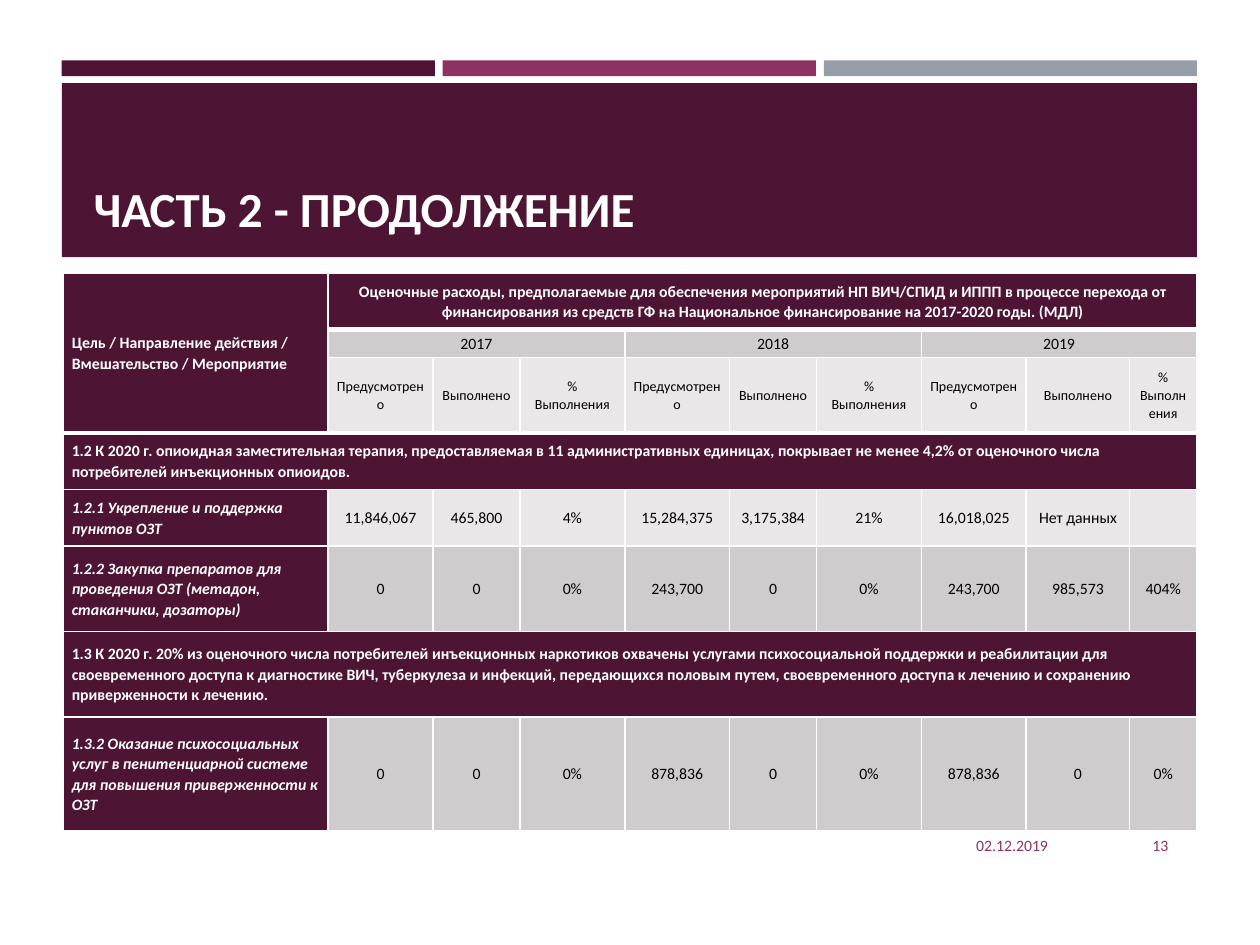
from dataclasses import dataclass

from lxml import etree
from pptx import Presentation
from pptx.dml.color import RGBColor
from pptx.enum.shapes import MSO_SHAPE
from pptx.enum.text import MSO_ANCHOR, MSO_AUTO_SIZE, PP_ALIGN
from pptx.oxml.ns import qn
from pptx.util import Inches, Pt

LEFT, CENTER, RIGHT = PP_ALIGN.LEFT, PP_ALIGN.CENTER, PP_ALIGN.RIGHT
MIDDLE, BOTTOM = MSO_ANCHOR.MIDDLE, MSO_ANCHOR.BOTTOM
RECTANGLE = MSO_SHAPE.RECTANGLE
NO_AUTOFIT = MSO_AUTO_SIZE.NONE

PLUM = RGBColor(0x4D, 0x14, 0x34)
BERRY = RGBColor(0x90, 0x31, 0x63)
STEEL = RGBColor(0x96, 0x9F, 0xA7)
DARK_BAND = RGBColor(0xD0, 0xCC, 0xCE)
LIGHT_BAND = RGBColor(0xE9, 0xE7, 0xE8)
WHITE = RGBColor(0xFF, 0xFF, 0xFF)
BLACK = RGBColor(0x00, 0x00, 0x00)
FONT = "Calibri"

COLUMNS = [2.1, 0.83, 0.69, 0.83, 0.83, 0.69, 0.83, 0.83, 0.82, 0.53]
ROWS = [0.45, 0.22, 0.6, 0.45, 0.45, 0.68, 0.68, 0.9]
HEAVY_BOTTOMS = (0, 2)
YEARS = ["2017", "2018", "2019"]
MEASURES = ["Предусмотрено", "Выполнено", "% Выполнения"]
CORNER = "Цель / Направление действия / Вмешательство / Мероприятие"
HEADING = (
    "Оценочные расходы, предполагаемые для обеспечения мероприятий НП ВИЧ/СПИД и ИППП "
    "в процессе перехода от финансирования из средств ГФ на Национальное финансирование "
    "на 2017-2020 годы. (МДЛ)"
)
GOALS = {
    3: "1.2 К 2020 г. опиоидная заместительная терапия, предоставляемая в 11 "
       "административных единицах, покрывает не менее 4,2% от оценочного числа "
       "потребителей инъекционных опиоидов.",
    6: "1.3 К 2020 г. 20% из оценочного числа потребителей инъекционных наркотиков "
       "охвачены услугами психосоциальной поддержки и реабилитации для своевременного "
       "доступа к диагностике ВИЧ, туберкулеза и инфекций, передающихся половым путем, "
       "своевременного доступа к лечению и сохранению приверженности к лечению.",
}
ACTIVITIES = {
    4: (LIGHT_BAND, "1.2.1 Укрепление и поддержка пунктов ОЗТ",
        ["11,846,067", "465,800", "4%", "15,284,375", "3,175,384", "21%",
         "16,018,025", "Нет данных", ""]),
    5: (DARK_BAND, "1.2.2 Закупка препаратов для проведения ОЗТ (метадон, стаканчики, дозаторы)",
        ["0", "0", "0%", "243,700", "0", "0%", "243,700", "985,573", "404%"]),
    7: (DARK_BAND, "1.3.2 Оказание психосоциальных услуг в пенитенциарной системе "
        "для повышения приверженности к ОЗТ",
        ["0", "0", "0%", "878,836", "0", "0%", "878,836", "0", "0%"]),
}


@dataclass
class Box:
    """A rectangle that can be divided by shares of its own size."""

    left: int
    top: int
    width: int
    height: int

    def inner(self, left, top, width, height):
        """Return the inner box at the given shares."""
        return Box(int(self.left + left * self.width), int(self.top + top * self.height),
                   int(width * self.width), int(height * self.height))

    def bounds(self):
        """Return left, top, width and height."""
        return self.left, self.top, self.width, self.height


def write(frame, text, size=9, color=WHITE, bold=False, italic=False, align=LEFT, spacing=None):
    """Put one formatted paragraph into a text frame."""
    frame.word_wrap = True
    para = frame.paragraphs[0]
    para.alignment = align
    para.line_spacing = spacing
    span = para.add_run()
    span.text = text
    span.font.name = FONT
    span.font.size = Pt(size)
    span.font.bold = bold
    span.font.italic = italic
    span.font.color.rgb = color


def add_block(page, box, color):
    """Draw a plain filled rectangle."""
    block = page.shapes.add_shape(RECTANGLE, *box.bounds())
    block.shadow.inherit = False
    block.fill.solid()
    block.fill.fore_color.rgb = color
    block.line.fill.background()


def add_banner(page, box):
    """Draw three equal bars above the title panel and raise the title over it."""
    gap = 0.007
    width = (1 - 2 * gap) / 3
    for index, color in enumerate((PLUM, BERRY, STEEL)):
        add_block(page, box.inner(index * (width + gap), 0, width, 0.08), color)
    add_block(page, box.inner(0, 0.115, 1, 0.885), PLUM)
    title = page.shapes.title
    title.left, title.top, title.width, title.height = box.inner(0.017, 0.17, 0.97, 0.76).bounds()
    title.text_frame.auto_size = NO_AUTOFIT
    title.text_frame.vertical_anchor = BOTTOM
    write(title.text_frame, "ЧАСТЬ 2 - ПРОДОЛЖЕНИЕ", size=28, bold=True)
    page.shapes._spTree.append(title._element)


def add_border(cell, side, width):
    """Give one side of a cell a white line."""
    line = etree.SubElement(cell._tc.get_or_add_tcPr(), qn(f"a:ln{side}"), w=str(Pt(width)))
    fill = etree.SubElement(line, qn("a:solidFill"))
    etree.SubElement(fill, qn("a:srgbClr"), val=str(WHITE))


def fill_cell(cell, text, fill, **text_format):
    """Set a cell's fill, margins and text."""
    cell.fill.solid()
    cell.fill.fore_color.rgb = fill
    cell.vertical_anchor = MIDDLE
    cell.margin_left = cell.margin_right = Inches(0.07)
    cell.margin_top = cell.margin_bottom = 0
    if text:
        write(cell.text_frame, text, spacing=1.07, **text_format)


def add_header(table):
    """Fill the three header rows of the table."""
    table.cell(0, 0).merge(table.cell(2, 0))
    fill_cell(table.cell(0, 0), CORNER, PLUM, bold=True)
    table.cell(0, 1).merge(table.cell(0, 9))
    fill_cell(table.cell(0, 1), HEADING, PLUM, bold=True, align=CENTER)
    for index, year in enumerate(YEARS):
        first = 1 + index * len(MEASURES)
        table.cell(1, first).merge(table.cell(1, first + 2))
        fill_cell(table.cell(1, first), year, DARK_BAND, color=BLACK, align=CENTER)
        for offset, measure in enumerate(MEASURES):
            fill_cell(table.cell(2, first + offset), measure, LIGHT_BAND,
                      size=8, color=BLACK, align=CENTER)


def add_expenses(page, box):
    """Build the table of planned and completed expenses."""
    table = page.shapes.add_table(len(ROWS), len(COLUMNS), *box.bounds()).table
    for column, share in zip(table.columns, COLUMNS):
        column.width = int(box.width * share / sum(COLUMNS))
    for index, share in enumerate(ROWS):
        table.rows[index].height = int(box.height * share / sum(ROWS))
        for cell in table.rows[index].cells:
            add_border(cell, "L", 1)
            add_border(cell, "R", 1)
            add_border(cell, "T", 3 if index - 1 in HEAVY_BOTTOMS else 1)
            add_border(cell, "B", 3 if index in HEAVY_BOTTOMS else 1)
    add_header(table)
    for row, goal in GOALS.items():
        table.cell(row, 0).merge(table.cell(row, 9))
        fill_cell(table.cell(row, 0), goal, PLUM, bold=True)
    for row, (band, activity, values) in ACTIVITIES.items():
        fill_cell(table.cell(row, 0), activity, PLUM, bold=True, italic=True)
        for column, value in enumerate(values, start=1):
            fill_cell(table.cell(row, column), value, band, color=BLACK, align=CENTER)


def add_footer(page, box):
    """Place the date and the page number."""
    for text, left, width in (("02.12.2019", 0, 0.71), ("13", 0.74, 0.26)):
        frame = page.shapes.add_textbox(*box.inner(left, 0, width, 1).bounds()).text_frame
        frame.vertical_anchor = MIDDLE
        write(frame, text, color=BERRY, align=RIGHT)


def main():
    """Build and save the deck."""
    deck = Presentation()
    deck.slide_width, deck.slide_height = Inches(10), Inches(7.5)
    page = deck.slides.add_slide(deck.slide_layouts[5])
    whole = Box(0, 0, deck.slide_width, deck.slide_height)
    add_banner(page, whole.inner(0.049, 0.064, 0.901, 0.208))
    add_footer(page, whole.inner(0.608, 0.868, 0.329, 0.053))
    add_expenses(page, whole.inner(0.05, 0.289, 0.9, 0.59))
    deck.save("out.pptx")


if __name__ == "__main__":
    main()
